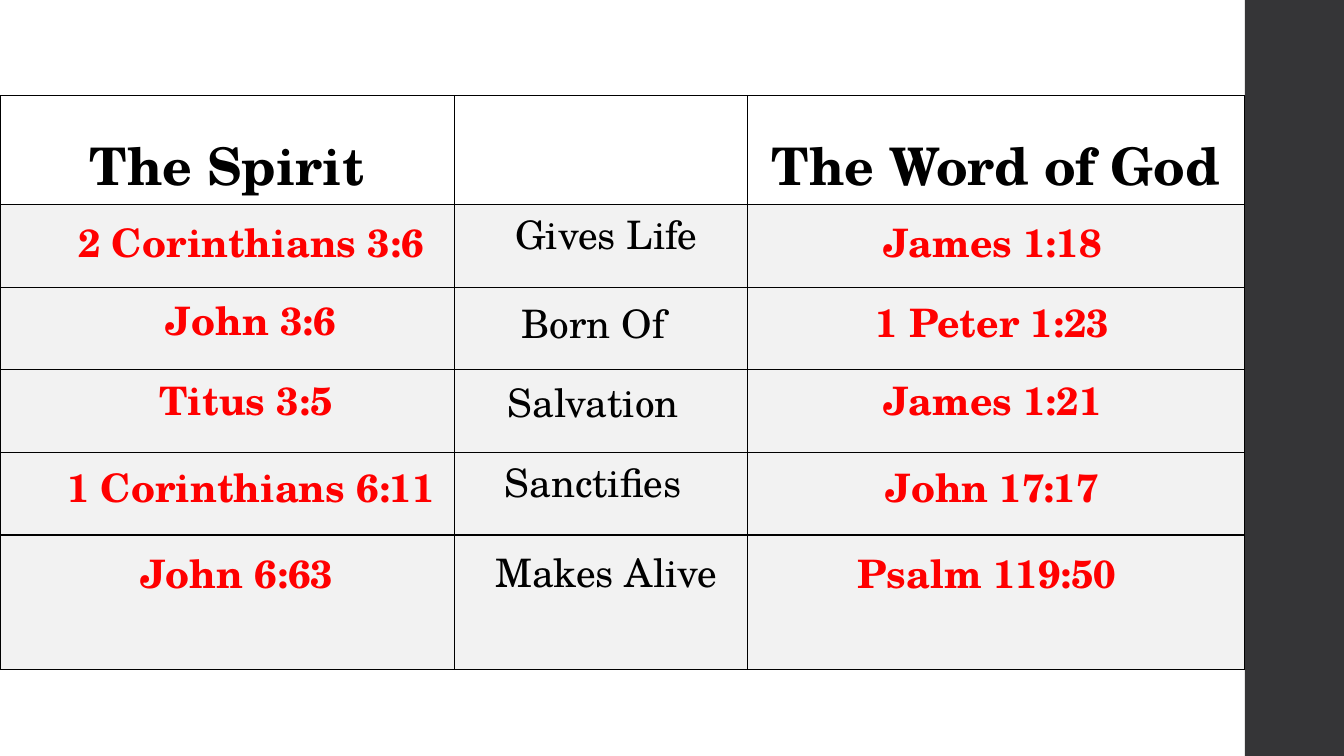
from dataclasses import dataclass

from lxml.etree import SubElement
from pptx import Presentation
from pptx.dml.color import RGBColor
from pptx.enum.shapes import MSO_SHAPE as Shape
from pptx.enum.text import MSO_ANCHOR as Anchor, MSO_AUTO_SIZE as AutoSize, PP_ALIGN as Align
from pptx.oxml.ns import qn
from pptx.slide import Slide
from pptx.table import _Cell as Cell
from pptx.text.text import TextFrame
from pptx.util import Pt

FONT = "TeX Gyre Schola"
COLORS = {
    "black": "000000",
    "white": "FFFFFF",
    "row": "F2F2F2",
    "verse": "FF0000",
    "bar": "353537",
}
SLIDE_WIDTH, SLIDE_HEIGHT = 960, 540
BAR_LEFT = 889.2
TABLE_TOP = 68.4
COLUMN_WIDTHS = [324.4, 209.3, 355.5]
ROW_HEIGHTS = [71.3, 59, 59, 59, 59, 95.9]
HEADERS = ["The Spirit", "", "The Word of God"]
LABEL_HEIGHT = 44


@dataclass(frozen=True)
class Label:
    text: str
    top: float
    left: float
    width: float = 301.7


SPIRIT_VERSES = [
    Label("2 Corinthians 3:6", 149.8, 22.3, 313.9),
    Label("John 3:6", 205.9, 22.3, 313.9),
    Label("Titus 3:5 ", 262.8, 59.8, 239.8),
    Label("1 Corinthians 6:11", 324.7, 6.5, 345.6),
    Label("John 6:63 ", 386.6, 22.3),
]
WORKS = [
    Label("Gives Life", 144, 282.2),
    Label("Born Of", 208.1, 272.9),
    Label("Salvation", 264.2, 272.9),
    Label("Sanctifies", 321.8, 272.9),
    Label("Makes Alive", 385.9, 282.2),
]
WORD_VERSES = [
    Label("James 1:18", 149.8, 558),
    Label("1 Peter 1:23", 207.4, 558),
    Label("James 1:21", 262.8, 558),
    Label("John 17:17", 324.7, 558),
    Label("Psalm 119:50 ", 386.6, 558),
]


def color(name: str) -> RGBColor:
    return RGBColor.from_string(COLORS[name])


def write(frame: TextFrame, text: str, *, size: float = 28, ink: str = "black",
          bold: bool = False) -> None:
    para = frame.paragraphs[0]
    para.alignment = Align.CENTER
    para.line_spacing = 1.07
    span = para.add_run()
    span.text = text
    span.font.name = FONT
    span.font.size = Pt(size)
    span.font.bold = bold
    span.font.color.rgb = color(ink)


def outline_cell(cell: Cell) -> None:
    """Give all four sides a thin black border, placed before the fill as the schema asks."""
    properties = cell._tc.get_or_add_tcPr()
    for position, side in enumerate(("a:lnL", "a:lnR", "a:lnT", "a:lnB")):
        line = SubElement(properties, qn(side), w=str(Pt(1)))
        fill = SubElement(line, qn("a:solidFill"))
        SubElement(fill, qn("a:srgbClr"), val=COLORS["black"])
        properties.insert(position, line)


def add_side_bar(page: Slide) -> None:
    bar = page.shapes.add_shape(Shape.RECTANGLE, Pt(BAR_LEFT), 0,
                                Pt(SLIDE_WIDTH - BAR_LEFT), Pt(SLIDE_HEIGHT))
    bar.shadow.inherit = False
    bar.fill.solid()
    bar.fill.fore_color.rgb = color("bar")
    bar.line.fill.background()


def add_comparison_table(page: Slide) -> None:
    table = page.shapes.add_table(
        len(ROW_HEIGHTS), len(COLUMN_WIDTHS), 0, Pt(TABLE_TOP),
        Pt(sum(COLUMN_WIDTHS)), Pt(sum(ROW_HEIGHTS))).table
    table.horz_banding = False
    for column, width in zip(table.columns, COLUMN_WIDTHS):
        column.width = Pt(width)
    for index, (row, height) in enumerate(zip(table.rows, ROW_HEIGHTS)):
        row.height = Pt(height)
        for cell in row.cells:
            cell.fill.solid()
            cell.fill.fore_color.rgb = color("row" if index else "white")
            outline_cell(cell)
    for cell, header in zip(table.rows[0].cells, HEADERS):
        cell.vertical_anchor = Anchor.MIDDLE
        cell.margin_left = cell.margin_right = Pt(13)
        cell.margin_top, cell.margin_bottom = Pt(16.6), 0
        if header:
            write(cell.text_frame, header, size=37, bold=True)


def add_label(page: Slide, label: Label, *, ink: str, bold: bool) -> None:
    box = page.shapes.add_textbox(Pt(label.left), Pt(label.top),
                                  Pt(label.width), Pt(LABEL_HEIGHT))
    box.text_frame.word_wrap = True
    box.text_frame.auto_size = AutoSize.SHAPE_TO_FIT_TEXT
    write(box.text_frame, label.text, ink=ink, bold=bold)


def main() -> None:
    deck = Presentation()
    deck.slide_width, deck.slide_height = Pt(SLIDE_WIDTH), Pt(SLIDE_HEIGHT)
    page = deck.slides.add_slide(deck.slide_layouts[6])
    add_side_bar(page)
    add_comparison_table(page)
    for verse in SPIRIT_VERSES + WORD_VERSES:
        add_label(page, verse, ink="verse", bold=True)
    for work in WORKS:
        add_label(page, work, ink="black", bold=False)
    deck.save("out.pptx")


if __name__ == "__main__":
    main()
